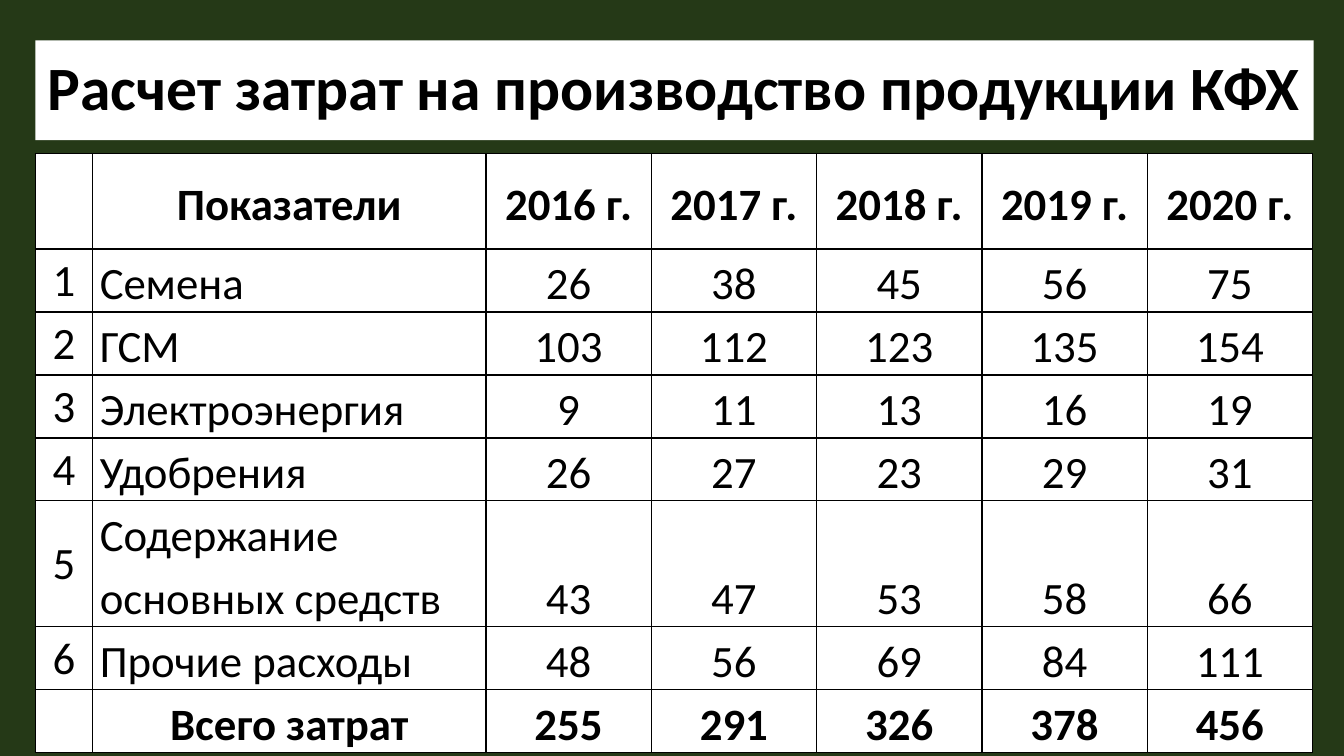
import pptx
import pptx.util
import pptx.dml.color
import pptx.enum.shapes
import pptx.enum.text
import pptx.oxml
from pptx.oxml.ns import nsdecls

Inches, Pt = pptx.util.Inches, pptx.util.Pt
Align = pptx.enum.text.PP_ALIGN
Anchor = pptx.enum.text.MSO_ANCHOR

TITLE = "Расчет затрат на производство продукции КФХ"
ROWS = [
    ("", "Показатели", "2016 г.", "2017 г.", "2018 г.", "2019 г.", "2020 г."),
    ("1", "Семена", 26, 38, 45, 56, 75),
    ("2", "ГСМ", 103, 112, 123, 135, 154),
    ("3", "Электроэнергия", 9, 11, 13, 16, 19),
    ("4", "Удобрения", 26, 27, 23, 29, 31),
    ("5", "Содержание основных средств", 43, 47, 53, 58, 66),
    ("6", "Прочие расходы", 48, 56, 69, 84, 111),
    ("", "Всего затрат", 255, 291, 326, 378, 456),
]
WIDTHS = [0.57, 3.9] + [1.64] * 5
HEAD, LINE = 0.95, 0.62
LEFT, WIDE = 0.35, 12.68
THEME = {
    "font": "Calibri", "back": "253917", "fill": "FFFFFF", "ink": "000000",
    "title": 44, "body": 32, "rule": 1,
}


def color(name):
    return pptx.dml.color.RGBColor.from_string(THEME[name])


def paint(part, name):
    part.fill.solid()
    part.fill.fore_color.rgb = color(name)


def style(para, size, bold, align, space):
    para.alignment = align
    para.line_spacing = space
    for run in para.runs:
        font = run.font
        font.name, font.size, font.bold = THEME["font"], Pt(THEME[size]), bold
        font.color.rgb = color("ink")


def border(cell):
    props = cell._tc.get_or_add_tcPr()
    for spot, side in enumerate(("lnL", "lnR", "lnT", "lnB")):
        props.insert(spot, pptx.oxml.parse_xml(
            f'<a:{side} {nsdecls("a")} w="{Pt(THEME["rule"])}"><a:solidFill>'
            f'<a:srgbClr val="{THEME["ink"]}"/></a:solidFill></a:{side}>'))


def add_title(slide):
    box = slide.shapes.add_shape(
        pptx.enum.shapes.MSO_SHAPE.RECTANGLE,
        Inches(LEFT), Inches(0.4), Inches(WIDE), Inches(0.99))
    box.shadow.inherit = False
    paint(box, "fill")
    box.line.fill.background()
    frame = box.text_frame
    frame.text = TITLE
    frame.word_wrap = False
    frame.vertical_anchor = Anchor.MIDDLE
    style(frame.paragraphs[0], "title", True, Align.CENTER, 0.9)


def fill_cell(cell, text, row, col):
    paint(cell, "fill")
    border(cell)
    cell.text = str(text)
    number = col == 0
    bold = row in (0, len(ROWS) - 1)
    cell.margin_left = cell.margin_right = Inches(0.01 if number else 0.07)
    cell.margin_top = Inches(0.01 if number else 0)
    cell.margin_bottom = 0
    low = row > 0 and col > 1
    cell.vertical_anchor = Anchor.BOTTOM if low else Anchor.MIDDLE
    align = Align.LEFT if col == 1 and not bold else Align.CENTER
    style(cell.text_frame.paragraphs[0], "body", bold, align,
          1.0 if number else 1.15)


def add_costs(slide):
    heights = [HEAD] + [
        LINE * (2 if len(row[1]) > 20 else 1) for row in ROWS[1:]]
    table = slide.shapes.add_table(
        len(ROWS), len(WIDTHS), Inches(LEFT), Inches(1.52),
        Inches(WIDE), Inches(sum(heights))).table
    for col, width in zip(table.columns, WIDTHS):
        col.width = Inches(width)
    for line, height in zip(table.rows, heights):
        line.height = Inches(height)
    for r, row in enumerate(ROWS):
        for c, text in enumerate(row):
            fill_cell(table.cell(r, c), text, r, c)


def main():
    deck = pptx.Presentation()
    deck.slide_width, deck.slide_height = Inches(13.33), Inches(7.5)
    slide = deck.slides.add_slide(deck.slide_layouts[6])
    paint(slide.background, "back")
    add_title(slide)
    add_costs(slide)
    deck.save("out.pptx")


if __name__ == "__main__":
    main()
